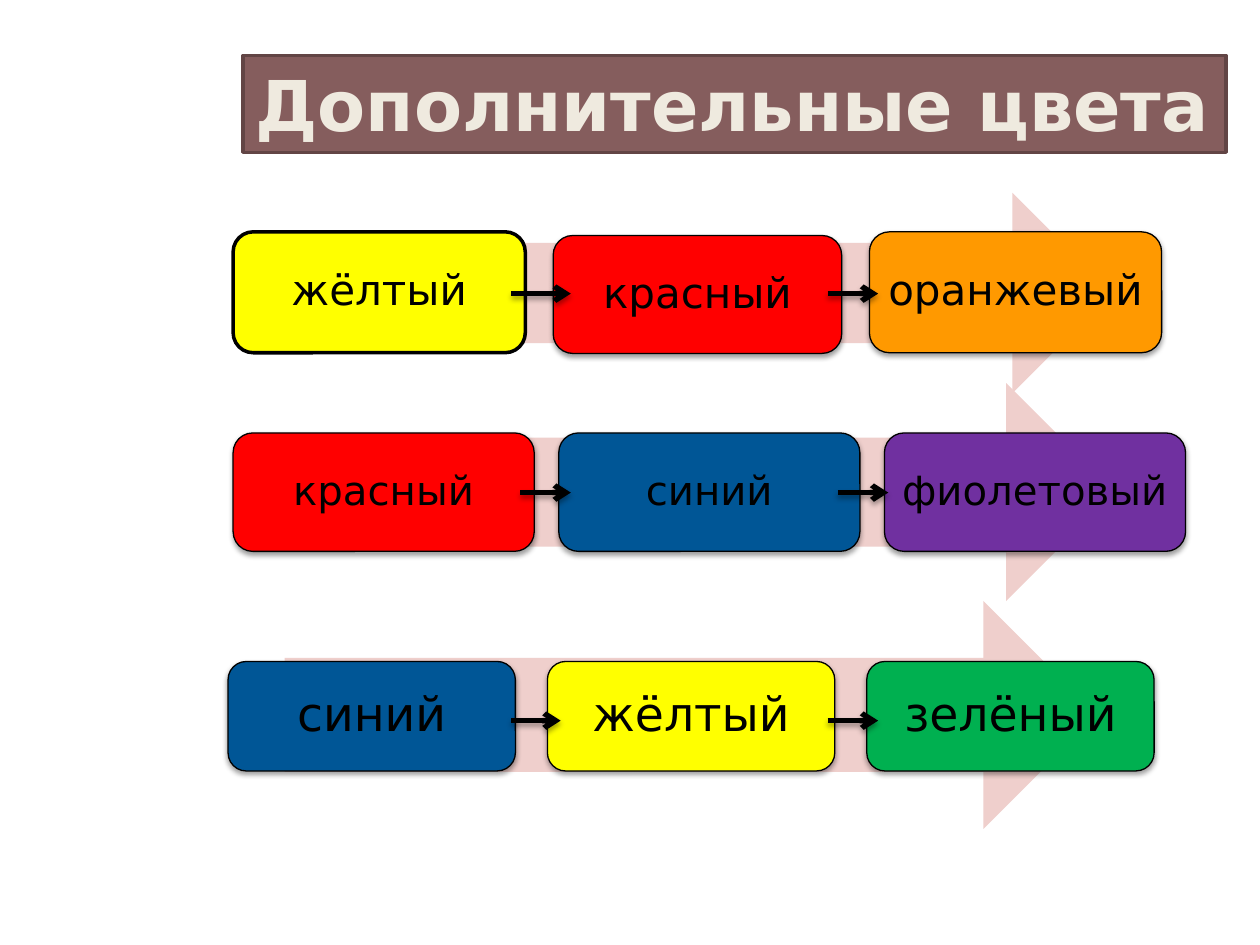
from lxml import etree
from pptx import Presentation
from pptx.dml.color import RGBColor
from pptx.enum.shapes import MSO_CONNECTOR, MSO_SHAPE
from pptx.enum.text import MSO_ANCHOR, MSO_AUTO_SIZE, PP_ALIGN
from pptx.oxml import parse_xml
from pptx.oxml.ns import qn
from pptx.util import Pt

RECTANGLE = MSO_SHAPE.RECTANGLE
ROUNDED = MSO_SHAPE.ROUNDED_RECTANGLE
RIGHT_ARROW = MSO_SHAPE.RIGHT_ARROW
STRAIGHT = MSO_CONNECTOR.STRAIGHT
MIDDLE = MSO_ANCHOR.MIDDLE
TOP = MSO_ANCHOR.TOP
FIT_SHAPE = MSO_AUTO_SIZE.SHAPE_TO_FIT_TEXT
CENTER = PP_ALIGN.CENTER
LEFT = PP_ALIGN.LEFT

NAMESPACE = 'xmlns:a="http://schemas.openxmlformats.org/drawingml/2006/main"'
FONT = "DejaVu Sans"
BLACK = "000000"
YELLOW = "FFFF00"
RED = "FF0000"
BLUE = "005696"

ROWS = [
    {
        "arrow": (162, 110.2, 473.8, 114.5),
        "size": 24,
        "boxes": [
            ("жёлтый", YELLOW, (133.2, 132.5, 167, 69.1)),
            ("красный", RED, (316.1, 134.6, 164.9, 67.4)),
            ("оранжевый", "FF9900", (496.8, 132.5, 167, 69.1)),
        ],
        "links": [(292.3, 326.2), (473, 501.8)],
        "link_y": 167.8,
    },
    {
        "arrow": (174.2, 218.9, 463, 124.6),
        "size": 23,
        "boxes": [
            (word, color, (133.2 + 186.1 * index, 247.4, 172.1, 67.7))
            for index, (word, color) in enumerate(
                [("красный", RED), ("синий", BLUE), ("фиолетовый", "7030A0")])
        ],
        "links": [(297.4, 326.2), (478.8, 507.6)],
        "link_y": 281.5,
    },
    {
        "arrow": (162.7, 343.4, 464.4, 130.3),
        "size": 27,
        "boxes": [
            (word, color, (130.3 + 182.5 * index, 378, 164.2, 62.6))
            for index, (word, color) in enumerate(
                [("синий", BLUE), ("жёлтый", YELLOW), ("зелёный", "00B050")])
        ],
        "links": [(292.3, 320.4), (473, 501.8)],
        "link_y": 411.8,
    },
]


def rgb(color):
    return RGBColor.from_string(color)


def add_shadow(shape, distance, opacity):
    properties = shape._element.spPr
    for effects in properties.findall(qn("a:effectLst")):
        properties.remove(effects)
    properties.append(parse_xml(
        f'<a:effectLst {NAMESPACE}><a:outerShdw blurRad="{Pt(3.1)}" '
        f'dist="{Pt(distance)}" dir="5400000" rotWithShape="0">'
        f'<a:srgbClr val="{BLACK}"><a:alpha val="{opacity * 1000}"/>'
        '</a:srgbClr></a:outerShdw></a:effectLst>'))


def add_panel(shapes, kind, place, fill, line=None, width=0.75):
    panel = shapes.add_shape(kind, *[Pt(value) for value in place])
    panel.shadow.inherit = False
    panel.fill.solid()
    panel.fill.fore_color.rgb = rgb(fill)
    if line:
        panel.line.color.rgb = rgb(line)
        panel.line.width = Pt(width)
    else:
        panel.line.fill.background()
    return panel


def add_text(panel, text, size, color, align, anchor, bold=False):
    frame = panel.text_frame
    frame.word_wrap = True
    frame.vertical_anchor = anchor
    para = frame.paragraphs[0]
    para.alignment = align
    span = para.add_run()
    span.text = text
    span.font.name = FONT
    span.font.size = Pt(size)
    span.font.bold = bold
    span.font.color.rgb = rgb(color)
    return span


def add_title(page):
    panel = add_panel(page.shapes, RECTANGLE, (139, 31.7, 561.6, 55.4),
                      "855D5D", "624545", 2)
    span = add_text(panel, "Дополнительные цвета", 40, "EFEADF", LEFT, TOP, True)
    panel.text_frame.auto_size = FIT_SHAPE
    span.font._element.insert(0, parse_xml(
        f'<a:ln {NAMESPACE} w="{Pt(1)}"><a:solidFill>'
        '<a:srgbClr val="6A6363"/></a:solidFill></a:ln>'))


def add_color_box(shapes, word, color, place, size, highlighted):
    box = add_panel(shapes, ROUNDED, place, color, BLACK,
                    2 if highlighted else 0.75)
    if not highlighted:
        add_shadow(box, 1.6, 38)
    add_text(box, word, size, BLACK, CENTER, MIDDLE)
    frame = box.text_frame
    frame.margin_left = frame.margin_right = Pt(3.6)
    frame.margin_top = frame.margin_bottom = Pt(7.2)
    frame.paragraphs[0].line_spacing = 0.9


def add_link(page, start, end, y):
    link = page.shapes.add_connector(STRAIGHT, Pt(start), Pt(y), Pt(end), Pt(y))
    link.line.color.rgb = rgb(BLACK)
    link.line.width = Pt(3)
    etree.SubElement(link.line._get_or_add_ln(), qn("a:tailEnd"), type="arrow")
    add_shadow(link, 1.8, 35)


def add_row(page, row, first):
    group = page.shapes.add_group_shape()
    add_panel(group.shapes, RIGHT_ARROW, row["arrow"], "EFCFCC")
    for index, (word, color, place) in enumerate(row["boxes"]):
        add_color_box(group.shapes, word, color, place, row["size"],
                      first and index == 0)
    for start, end in row["links"]:
        add_link(page, start, end, row["link_y"])


def main():
    deck = Presentation()
    deck.slide_width = Pt(720)
    deck.slide_height = Pt(540)
    page = deck.slides.add_slide(deck.slide_layouts[6])
    add_title(page)
    for index, row in enumerate(ROWS):
        add_row(page, row, index == 0)
    deck.save("out.pptx")


if __name__ == "__main__":
    main()
